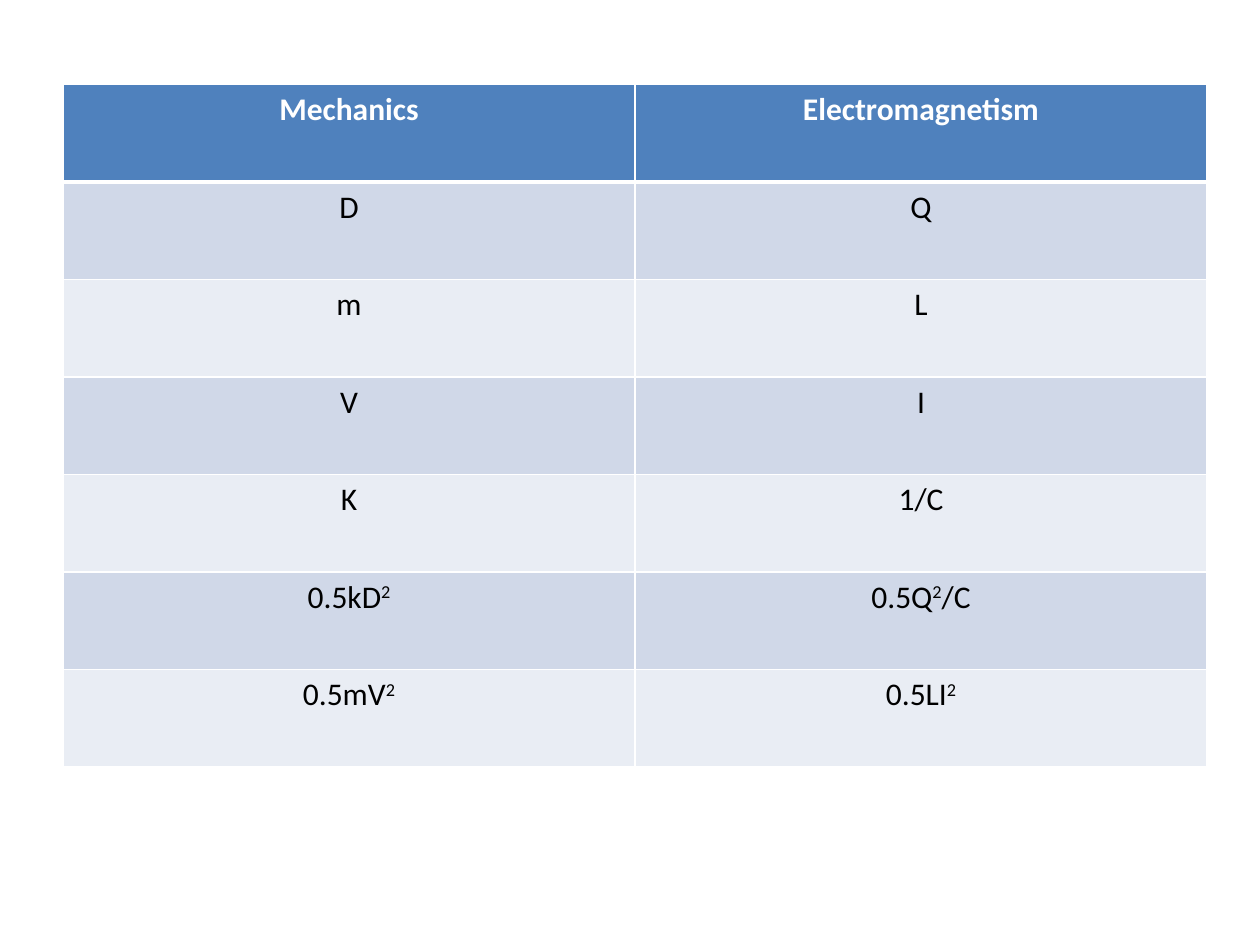
from typing import NamedTuple

from lxml import etree
from pptx import Presentation
from pptx.dml.color import RGBColor
from pptx.enum.text import PP_ALIGN
from pptx.oxml.ns import qn
from pptx.table import _Cell
from pptx.util import Inches, Pt

CENTER = PP_ALIGN.CENTER
COLORS = {
    "header": "4F81BD",
    "dark_band": "D0D8E8",
    "light_band": "E9EDF4",
    "white": "FFFFFF",
    "black": "000000",
}
FONT = "Calibri"
BORDER_SIDES = ("lnL", "lnR", "lnT", "lnB")


class Analogy(NamedTuple):
    """A mechanical quantity and its electromagnetic match; carets enclose superscripts."""

    mechanics: str
    electromagnetism: str


ANALOGIES = [
    Analogy("Mechanics", "Electromagnetism"),
    Analogy("D", "Q"),
    Analogy("m", "L"),
    Analogy("V", "I"),
    Analogy("K", "1/C"),
    Analogy("0.5kD^2", "0.5Q^2^/C"),
    Analogy("0.5mV^2", "0.5LI^2"),
]


def write_text(cell: _Cell, text: str, *, color: str, bold: bool = False, size: int = 18) -> None:
    """Write centred text, raising every second caret-separated piece."""
    paragraph = cell.text_frame.paragraphs[0]
    paragraph.alignment = CENTER
    for index, piece in enumerate(text.split("^")):
        run = paragraph.add_run()
        run.text = piece
        run.font.name = FONT
        run.font.size = Pt(size)
        run.font.bold = bold
        run.font.color.rgb = RGBColor.from_string(COLORS[color])
        if index % 2:
            run.font._element.set("baseline", "30000")


def draw_borders(cell: _Cell, widths: dict[str, float]) -> None:
    """Give each side of a cell a white line of the given width in points."""
    properties = cell._tc.get_or_add_tcPr()
    for position, side in enumerate(BORDER_SIDES):
        line = etree.Element(qn(f"a:{side}"), w=str(Pt(widths.get(side, 1))))
        fill = etree.SubElement(line, qn("a:solidFill"))
        etree.SubElement(fill, qn("a:srgbClr"), val=COLORS["white"])
        properties.insert(position, line)


def draw_row(cells: list[_Cell], analogy: Analogy, row_number: int) -> None:
    """Fill one table row as a header or as an alternating band."""
    is_header = row_number == 0
    band = "dark_band" if row_number % 2 else "light_band"
    widths = {"lnB": 3} if is_header else {"lnT": 3} if row_number == 1 else {}
    for cell, text in zip(cells, analogy):
        cell.fill.solid()
        cell.fill.fore_color.rgb = RGBColor.from_string(COLORS["header" if is_header else band])
        draw_borders(cell, widths)
        write_text(cell, text, color="white" if is_header else "black", bold=is_header)


def main() -> None:
    """Build the slide comparing mechanics with electromagnetism."""
    presentation = Presentation()
    presentation.slide_width = Inches(10)
    presentation.slide_height = Inches(7.5)
    slide = presentation.slides.add_slide(presentation.slide_layouts[6])
    table = slide.shapes.add_table(
        len(ANALOGIES), 2, Inches(0.5), Inches(0.67), Inches(9.08), Inches(5.42)
    ).table
    for row_number, (row, analogy) in enumerate(zip(table.rows, ANALOGIES)):
        draw_row(list(row.cells), analogy, row_number)
    presentation.save("out.pptx")


if __name__ == "__main__":
    main()
